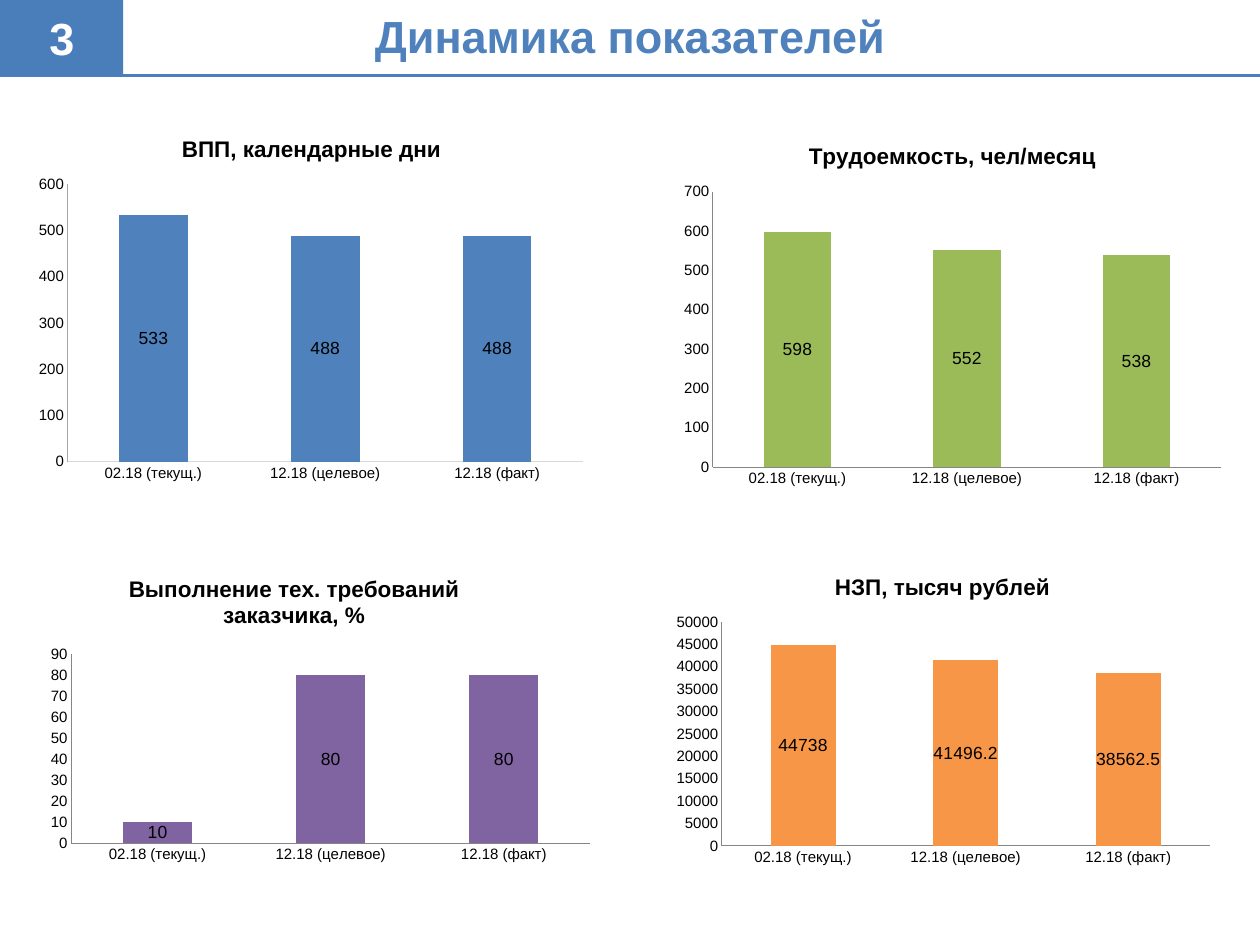
from dataclasses import dataclass

from lxml import etree
from pptx import Presentation
from pptx.chart.data import CategoryChartData
from pptx.dml.color import RGBColor
from pptx.enum.chart import XL_CHART_TYPE, XL_LABEL_POSITION, XL_TICK_MARK
from pptx.enum.shapes import MSO_CONNECTOR, MSO_SHAPE
from pptx.enum.text import MSO_AUTO_SIZE, PP_ALIGN
from pptx.oxml import parse_xml
from pptx.oxml.ns import nsdecls, qn
from pptx.util import Inches, Pt


@dataclass(frozen=True)
class Theme:
    font: str = "Arial"
    accent: str = "4F81BD"
    band: str = "4A7EBB"
    rule: str = "4B7EBC"
    axis: str = "868686"
    black: str = "000000"
    white: str = "FFFFFF"
    heading_size: int = 36
    chart_title_size: int = 18
    label_size: int = 14
    axis_size: int = 12


THEME = Theme()
SLIDE_WIDTH, SLIDE_HEIGHT = 14, 10.5
HEADER_HEIGHT, BADGE_WIDTH = 0.84, 1.37
HEADING = "Динамика показателей"
NUMBER = "3"
PERIODS = ["02.18 (текущ.)", "12.18 (целевое)", "12.18 (факт)"]

# box and plot are left, top, width, height on the slide, in inches
INDICATORS = [
    dict(title="ВПП, календарные дни", values=[533, 488, 488], color="4F81BD",
         box=(0.31, 1.31, 6.3, 4.12), plot=(0.75, 2.05, 5.73, 3.08),
         axis_colors=("D9D9D9", "A6A6A6"), fill="FFFFFF"),
    dict(title="Трудоемкость, чел/месяц", values=[598, 552, 538], color="9BBB59",
         box=(7.47, 1.39, 6.22, 4.09), plot=(7.92, 2.13, 5.65, 3.06)),
    dict(title="Выполнение тех. требований заказчика, %", values=[10, 80, 80],
         color="8064A2", box=(0.45, 6.27, 6.24, 3.39),
         plot=(0.79, 7.27, 5.77, 2.1), title_at=(0.15, 0.02)),
    dict(title="НЗП, тысяч рублей", values=[44738, 41496.2, 38562.5], color="F79646",
         box=(7.39, 6.19, 6.16, 3.49), plot=(8.02, 6.91, 5.42, 2.49)),
]


def rgb(color):
    return RGBColor.from_string(color)


def style_font(font, size, color, bold=False):
    font.name = THEME.font
    font.size = Pt(size)
    font.bold = bold
    font.color.rgb = rgb(color)


def add_text(slide, text, box, color, align, wrap):
    frame = slide.shapes.add_textbox(*map(Inches, box)).text_frame
    frame.word_wrap = wrap
    frame.auto_size = MSO_AUTO_SIZE.SHAPE_TO_FIT_TEXT
    frame.text = text
    paragraph = frame.paragraphs[0]
    paragraph.alignment = align
    style_font(paragraph.runs[0].font, THEME.heading_size, color, bold=True)


def add_header(slide):
    add_text(slide, HEADING, (0, 0.04, SLIDE_WIDTH, 0.71), THEME.accent,
             PP_ALIGN.CENTER, True)
    rule = slide.shapes.add_connector(
        MSO_CONNECTOR.STRAIGHT, 0, Inches(HEADER_HEIGHT),
        Inches(SLIDE_WIDTH), Inches(HEADER_HEIGHT))
    rule.line.color.rgb = rgb(THEME.rule)
    rule.line.width = Pt(3)
    etree.SubElement(rule._element.spPr, qn("a:effectLst"))

    badge = slide.shapes.add_shape(
        MSO_SHAPE.RECTANGLE, 0, 0, Inches(BADGE_WIDTH), Inches(HEADER_HEIGHT))
    badge.shadow.inherit = False
    badge.fill.solid()
    badge.fill.fore_color.rgb = rgb(THEME.band)
    badge.line.fill.background()
    add_text(slide, NUMBER, (0.45, 0.07, 0.48, 0.71), THEME.white,
             PP_ALIGN.LEFT, False)


def set_layout(parent, index, inner=False, **fractions):
    """Place a chart part by fractions (x, y, w, h) of the chart area."""
    for old in parent.findall(qn("c:layout")):
        parent.remove(old)
    target = '<c:layoutTarget val="inner"/>' if inner else ""
    modes = '<c:xMode val="edge"/><c:yMode val="edge"/>'
    sizes = "".join(f'<c:{k} val="{v:.4f}"/>' for k, v in fractions.items())
    parent.insert(index, parse_xml(
        f'<c:layout {nsdecls("c")}><c:manualLayout>{target}{modes}{sizes}'
        "</c:manualLayout></c:layout>"))


def style_axis(axis, color):
    axis.has_major_gridlines = False
    axis.major_tick_mark = axis.minor_tick_mark = XL_TICK_MARK.NONE
    style_font(axis.tick_labels.font, THEME.axis_size, THEME.black)
    axis.format.line.color.rgb = rgb(color)
    axis.format.line.width = Pt(0.75)


def add_indicator(slide, title, values, color, box, plot,
                  axis_colors=(THEME.axis, THEME.axis), fill=None, title_at=None):
    data = CategoryChartData(number_format="General")
    data.categories = PERIODS
    data.add_series(title, values)
    chart = slide.shapes.add_chart(
        XL_CHART_TYPE.COLUMN_STACKED, *map(Inches, box), data).chart
    chart.has_legend = False
    chart.font.name = THEME.font

    chart.has_title = True
    heading = chart.chart_title.text_frame
    heading.text = title
    style_font(heading.paragraphs[0].runs[0].font, THEME.chart_title_size,
               THEME.black, bold=True)
    if title_at:
        set_layout(chart.chart_title._element, 1, x=title_at[0], y=title_at[1])

    for axis, axis_color in zip((chart.category_axis, chart.value_axis), axis_colors):
        style_axis(axis, axis_color)
    chart.value_axis.minimum_scale = 0

    columns = chart.plots[0]
    columns.gap_width, columns.overlap = 150, 100
    columns.vary_by_categories = False
    series = columns.series[0]
    series.format.fill.solid()
    series.format.fill.fore_color.rgb = rgb(color)
    labels = series.data_labels
    labels.show_value = True
    labels.position = XL_LABEL_POSITION.CENTER
    style_font(labels.font, THEME.label_size, THEME.black)

    left, top, width, height = box
    set_layout(chart._chartSpace.chart.plotArea, 0, inner=True,
               x=(plot[0] - left) / width, y=(plot[1] - top) / height,
               w=plot[2] / width, h=plot[3] / height)
    if fill:
        chart._chartSpace.chart.addnext(parse_xml(
            f'<c:spPr {nsdecls("c", "a")}><a:solidFill><a:srgbClr val="{fill}"/>'
            "</a:solidFill><a:ln><a:noFill/></a:ln></c:spPr>"))


def main():
    presentation = Presentation()
    presentation.slide_width = Inches(SLIDE_WIDTH)
    presentation.slide_height = Inches(SLIDE_HEIGHT)
    slide = presentation.slides.add_slide(presentation.slide_layouts[6])
    add_header(slide)
    for indicator in INDICATORS:
        add_indicator(slide, **indicator)
    presentation.save("out.pptx")


if __name__ == "__main__":
    main()
